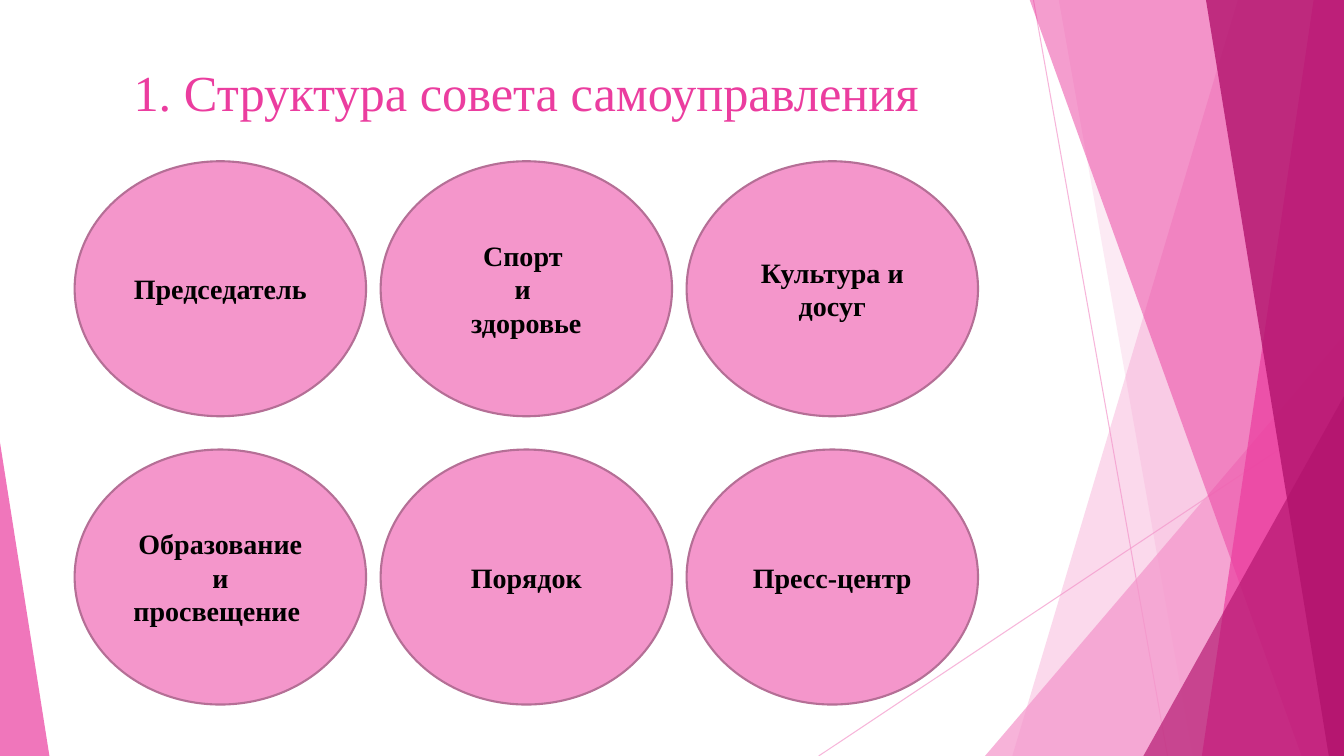
from lxml import etree
from pptx import Presentation
from pptx.dml.color import RGBColor
from pptx.enum.shapes import MSO_CONNECTOR, MSO_SHAPE
from pptx.enum.text import MSO_ANCHOR, PP_ALIGN
from pptx.oxml.ns import qn
from pptx.util import Inches, Pt

STRAIGHT = MSO_CONNECTOR.STRAIGHT
OVAL = MSO_SHAPE.OVAL
TRIANGLE = MSO_SHAPE.ISOSCELES_TRIANGLE
CENTER = PP_ALIGN.CENTER
TOP, MIDDLE = MSO_ANCHOR.TOP, MSO_ANCHOR.MIDDLE

WIDTH, HEIGHT = 13.33, 7.5
FONT = "Times New Roman"
LIGHT, BRIGHT, DEEP = "F496CB", "EB3D9F", "B2136D"
OUTLINE, BLACK = "B56F96", "000000"

COUNCIL = [
    ["Председатель", "Спорт \nи \nздоровье", "Культура и досуг"],
    ["Образование и просвещение ", "Порядок", "Пресс-центр"],
]


def color(value):
    """Turn a hex string into a colour."""
    return RGBColor.from_string(value)


def paint(fill, value, opacity=100):
    """Apply a solid colour with an opacity in percent."""
    fill.solid()
    fill.fore_color.rgb = color(value)
    if opacity < 100:
        for element in fill._xPr.iter(qn("a:srgbClr")):
            etree.SubElement(element, qn("a:alpha"), val=str(opacity * 1000))


def write(frame, text, size, value, bold=False, anchor=MIDDLE):
    """Write centred paragraphs, one for each line of the text."""
    frame.word_wrap = True
    frame.vertical_anchor = anchor
    for index, line in enumerate(text.split("\n")):
        paragraph = frame.paragraphs[0] if index == 0 else frame.add_paragraph()
        paragraph.alignment = CENTER
        run = paragraph.add_run()
        run.text = line
        run.font.name = FONT
        run.font.size = Pt(size)
        run.font.bold = bold
        run.font.color.rgb = color(value)


def add_ray(slide, start, end):
    """Draw a thin translucent line."""
    ray = slide.shapes.add_connector(STRAIGHT, *map(Inches, start + end))
    ray.line.width = Pt(0.75)
    paint(ray.line.fill, LIGHT, 70)
    etree.SubElement(ray._element.spPr, qn("a:effectLst"))


def add_band(slide, top_left, bottom_left, value, opacity):
    """Draw a full-height band with a slanted left side, up to the right edge."""
    builder = slide.shapes.build_freeform(Inches(top_left), Inches(-0.01))
    corners = [(WIDTH, -0.01), (WIDTH, HEIGHT), (bottom_left, HEIGHT)]
    builder.add_line_segments([(Inches(x), Inches(y)) for x, y in corners])
    finish_facet(builder.convert_to_shape(), value, opacity)


def add_corner(slide, left, top, width, apex, value, opacity):
    """Draw a right triangle standing on the bottom edge."""
    box = map(Inches, (left, top, width, HEIGHT - top))
    triangle = slide.shapes.add_shape(TRIANGLE, *box)
    triangle.adjustments[0] = apex
    finish_facet(triangle, value, opacity)


def finish_facet(shape, value, opacity):
    """Give a facet its translucent fill without outline or shadow."""
    shape.shadow.inherit = False
    shape.line.fill.background()
    paint(shape.fill, value, opacity)


def add_facets(slide):
    """Draw the decoration on both sides of the slide."""
    add_ray(slide, (10.25, 0), (11.58, HEIGHT))
    add_ray(slide, (WIDTH, 4.03), (8.12, HEIGHT))
    add_band(slide, 12.28, 10.04, LIGHT, 36)
    add_band(slide, 10.5, 11.83, LIGHT, 20)
    add_corner(slide, 9.77, 3.33, 3.56, 1, LIGHT, 72)
    add_band(slide, 10.21, 12.91, BRIGHT, 50)
    add_band(slide, 13.03, 11.92, BRIGHT, 70)
    add_band(slide, 11.96, 13.18, DEEP, 80)
    add_corner(slide, 11.34, 3.93, 1.99, 1, DEEP, 66)
    add_corner(slide, 0, 4.39, 0.49, 0, BRIGHT, 70)


def add_title(slide, text, left, top, width, height):
    """Place and format the title placeholder."""
    title = slide.shapes.title
    title.left, title.top = Inches(left), Inches(top)
    title.width, title.height = Inches(width), Inches(height)
    title.text_frame.margin_top = Inches(0.1)
    write(title.text_frame, text, 36, BRIGHT, anchor=TOP)


def add_council(slide, rows, left, top, width, height):
    """Spread the council's ovals evenly over the box."""
    oval_width, oval_height = 2.89, 2.53
    column_step = (width - oval_width) / (len(rows[0]) - 1)
    row_step = (height - oval_height) / (len(rows) - 1)
    for row, names in enumerate(rows):
        for column, name in enumerate(names):
            x, y = left + column * column_step, top + row * row_step
            box = map(Inches, (x, y, oval_width, oval_height))
            oval = slide.shapes.add_shape(OVAL, *box)
            oval.shadow.inherit = False
            paint(oval.fill, LIGHT)
            paint(oval.line.fill, OUTLINE)
            oval.line.width = Pt(1.5)
            write(oval.text_frame, name, 20, BLACK, bold=True)


def main():
    """Build the slide and save it."""
    presentation = Presentation()
    presentation.slide_width = Inches(WIDTH)
    presentation.slide_height = Inches(HEIGHT)
    slide = presentation.slides.add_slide(presentation.slide_layouts[5])
    add_facets(slide)
    add_title(slide, "1. Структура совета самоуправления", 0.74, 0.51, 8.96, 1.44)
    add_council(slide, COUNCIL, 0.74, 1.6, 8.96, 5.39)
    presentation.save("out.pptx")


if __name__ == "__main__":
    main()
